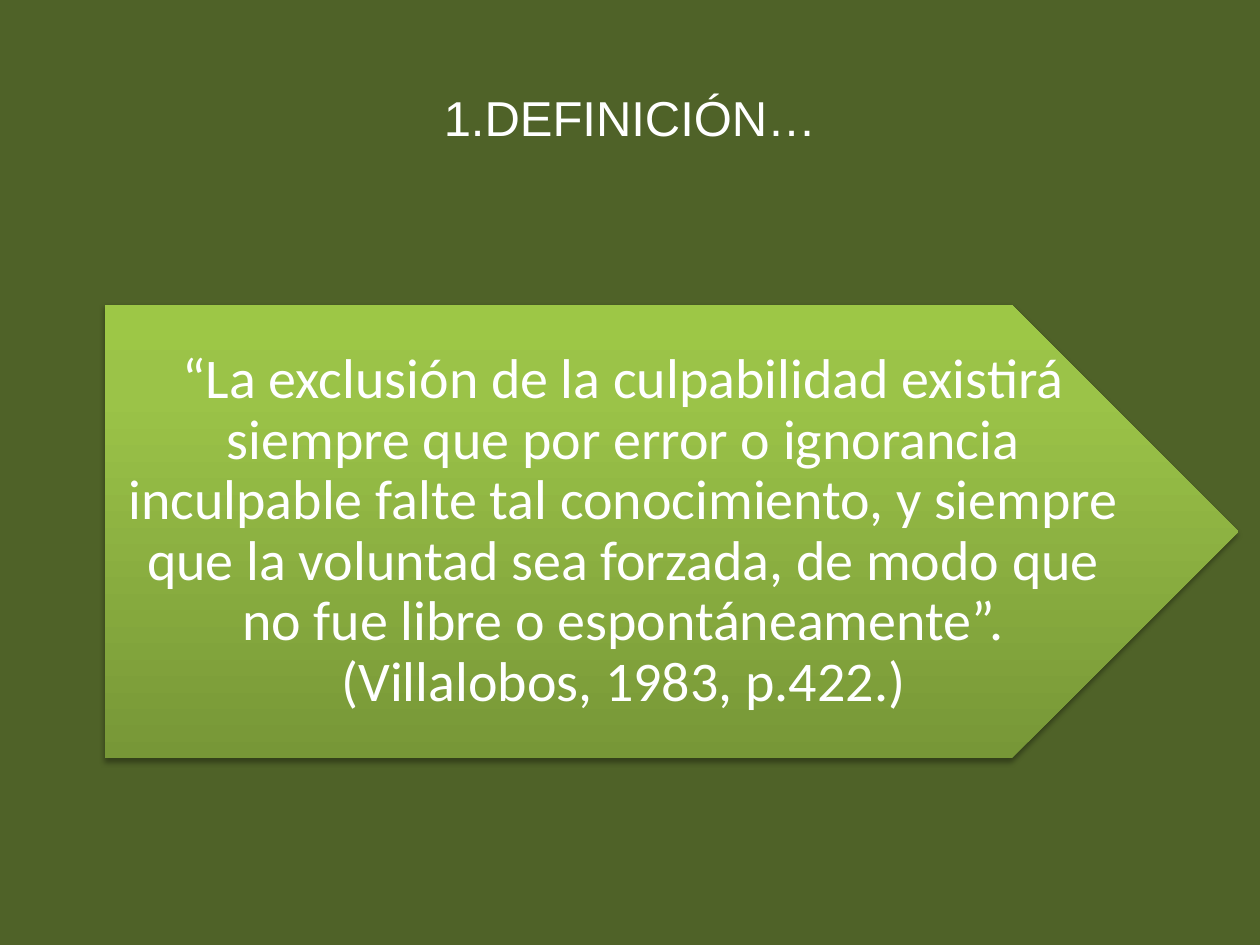
from dataclasses import dataclass

from lxml import etree
from pptx import Presentation
from pptx.dml.color import RGBColor
from pptx.enum.shapes import MSO_SHAPE
from pptx.enum.text import MSO_ANCHOR, PP_ALIGN
from pptx.oxml.ns import qn
from pptx.util import Inches, Pt

PENTAGON = MSO_SHAPE.PENTAGON
MIDDLE = MSO_ANCHOR.MIDDLE
CENTER = PP_ALIGN.CENTER
TITLE_ONLY = 5

TITLE = "1.DEFINICIÓN…"
QUOTE = (
    "“La exclusión de la culpabilidad existirá siempre que por error o "
    "ignorancia inculpable falte tal conocimiento, y siempre que la voluntad "
    "sea forzada, de modo que no fue libre o espontáneamente”. "
    "(Villalobos, 1983, p.422.)"
)


@dataclass(frozen=True)
class Theme:
    background: str = "4F6228"
    text: str = "FFFFFF"
    arrow_stops: tuple = ((0, "779737"), (80, "9BC348"), (100, "9DC746"))
    shadow: str = "000000"
    title_font: str = "Arial"
    title_size: int = 28
    quote_font: str = "Calibri"
    quote_size: int = 32


THEME = Theme()


def add_color(parent, color):
    return etree.SubElement(parent, qn("a:srgbClr"), val=color)


def fill_upward(shape, stops):
    """Fill with a gradient whose first stop lies at the bottom edge."""
    shape.fill.gradient()
    shape.fill.gradient_angle = 90
    stop_list = shape._element.spPr.find(".//" + qn("a:gsLst"))
    for default_stop in list(stop_list):
        stop_list.remove(default_stop)
    for percent, color in stops:
        stop = etree.SubElement(stop_list, qn("a:gs"), pos=str(percent * 1000))
        add_color(stop, color)


def drop_shadow(shape, color, blur, distance, opacity):
    shape.shadow.inherit = False
    effects = shape._element.spPr.find(qn("a:effectLst"))
    shadow = etree.SubElement(
        effects, qn("a:outerShdw"), blurRad=str(Pt(blur)), dist=str(Pt(distance)),
        dir=str(90 * 60000), rotWithShape="0",
    )
    etree.SubElement(add_color(shadow, color), qn("a:alpha"), val=str(opacity * 1000))


def write_text(frame, text, font, size):
    frame.text = text
    frame.word_wrap = True
    frame.vertical_anchor = MIDDLE
    paragraph = frame.paragraphs[0]
    paragraph.alignment = CENTER
    for run in paragraph.runs:
        run.font.name = font
        run.font.size = Pt(size)
        run.font.color.rgb = RGBColor.from_string(THEME.text)
    return paragraph


def add_title(slide, width, height):
    title = slide.shapes.title
    title.left, title.top = int(width * 0.05), int(height * 0.04)
    title.width, title.height = int(width * 0.9), int(height / 6)
    write_text(title.text_frame, TITLE, THEME.title_font, THEME.title_size)


def add_quote_arrow(slide, width, height):
    left, top = Inches(0.83), Inches(2.42)
    arrow_width, arrow_height = int(width * 0.9), int(height * 0.48)
    group = slide.shapes.add_group_shape()

    arrow = group.shapes.add_shape(PENTAGON, left, top, arrow_width, arrow_height)
    fill_upward(arrow, THEME.arrow_stops)
    arrow.line.fill.background()
    drop_shadow(arrow, THEME.shadow, blur=3.1, distance=1.8, opacity=35)

    # The text stops halfway along the arrow's point.
    text_width = arrow_width - arrow_height // 4
    quote = group.shapes.add_textbox(left, top, text_width, arrow_height)
    frame = quote.text_frame
    frame.margin_left, frame.margin_right = Inches(0.16), Inches(0.02)
    frame.margin_top = frame.margin_bottom = Inches(0.09)
    paragraph = write_text(frame, QUOTE, THEME.quote_font, THEME.quote_size)
    paragraph.line_spacing = 0.9


def main():
    deck = Presentation()
    deck.slide_width, deck.slide_height = Inches(10), Inches(7.5)
    slide = deck.slides.add_slide(deck.slide_layouts[TITLE_ONLY])
    background = slide.background.fill
    background.solid()
    background.fore_color.rgb = RGBColor.from_string(THEME.background)
    add_title(slide, deck.slide_width, deck.slide_height)
    add_quote_arrow(slide, deck.slide_width, deck.slide_height)
    deck.save("out.pptx")


if __name__ == "__main__":
    main()
